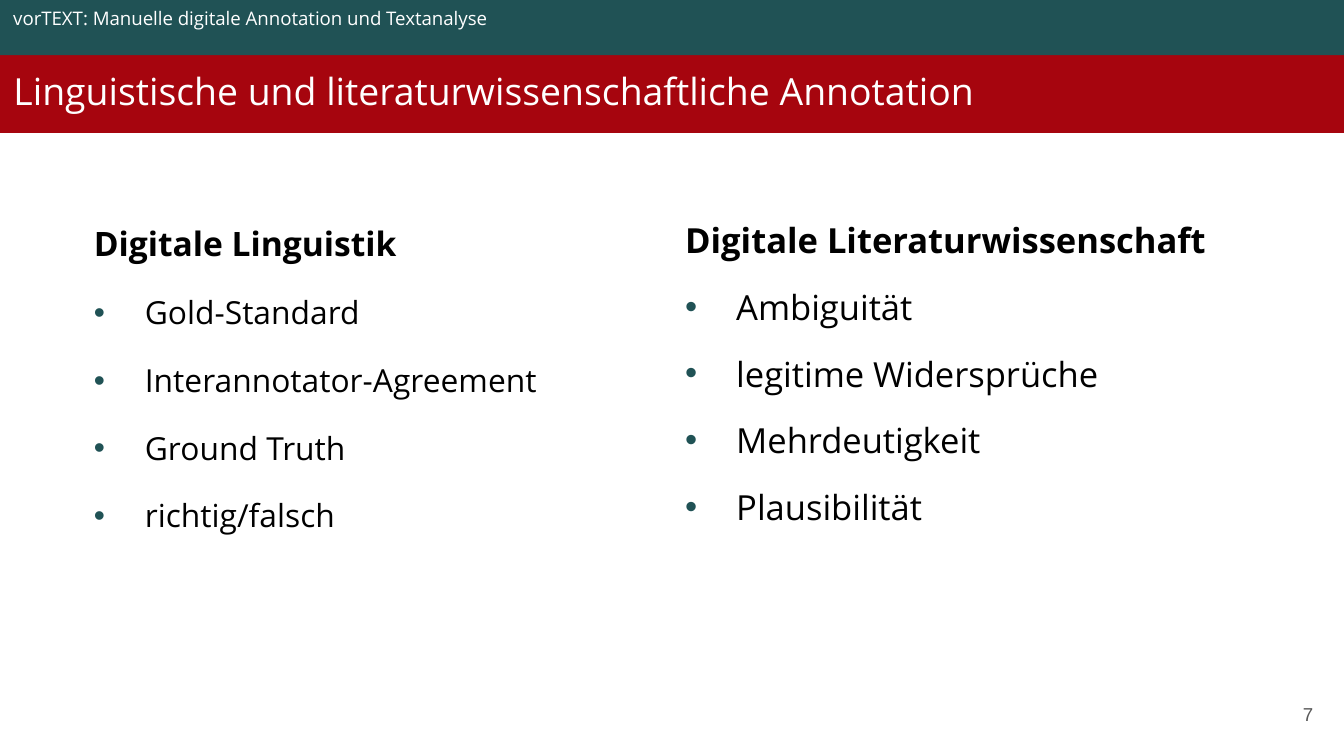
from lxml.etree import SubElement
from pptx import Presentation
from pptx.dml.color import RGBColor
from pptx.enum.shapes import MSO_SHAPE as Shape
from pptx.enum.text import MSO_ANCHOR as Anchor, MSO_AUTO_SIZE as AutoSize, PP_ALIGN as Align
from pptx.oxml.ns import qn
from pptx.util import Inches, Pt

TEAL = RGBColor(0x20, 0x52, 0x55)
RED = RGBColor(0xA6, 0x05, 0x0E)
GREY = RGBColor(0x59, 0x59, 0x59)
WHITE = RGBColor(0xFF, 0xFF, 0xFF)
BLACK = RGBColor(0x00, 0x00, 0x00)
FONT = "Open Sans"

SERIES = "vorTEXT: Manuelle digitale Annotation und Textanalyse"
TITLE = "Linguistische und literaturwissenschaftliche Annotation"
PAGE = "7"
COLUMNS = [
    {"heading": "Digitale Linguistik",
     "items": ["Gold-Standard", "Interannotator-Agreement", "Ground Truth", "richtig/falsch"],
     "left": 0.6, "width": 3.7, "sizes": (18, 17), "line": 0.9},
    {"heading": "Digitale Literaturwissenschaft",
     "items": ["Ambiguität", "legitime Widersprüche", "Mehrdeutigkeit", "Plausibilität"],
     "left": 5, "width": 4.5, "sizes": (18.5, 18.5), "line": 0.8},
]

WIDTH = 10
HEIGHT = WIDTH * 9 / 16
HEADER, TITLE_BAR = 0.41, 0.58
COLUMN_TOP, COLUMN_HEIGHT = 1.64, 2.74
INDENT, ITEM_GAP = 0.38, 18


def box(left, top, width, height):
    return [Inches(value) for value in (left, top, width, height)]


def set_frame(shape, vertical, anchor=Anchor.TOP):
    frame = shape.text_frame
    frame.word_wrap = True
    frame.auto_size = AutoSize.NONE
    frame.vertical_anchor = anchor
    frame.margin_left = frame.margin_right = Inches(0.1)
    frame.margin_top = frame.margin_bottom = Inches(vertical)
    return frame


def add_run(paragraph, text, size, color, bold=False, font=FONT):
    run = paragraph.add_run()
    run.text = text
    run.font.name = font
    run.font.size = Pt(size)
    run.font.bold = bold
    run.font.color.rgb = color


def add_bullet(paragraph):
    properties = paragraph._p.get_or_add_pPr()
    properties.set("marL", str(Inches(INDENT)))
    properties.set("indent", str(-Inches(INDENT)))
    color = SubElement(properties, qn("a:buClr"))
    SubElement(color, qn("a:srgbClr"), val=str(TEAL))
    SubElement(properties, qn("a:buFont"), typeface="Arial")
    SubElement(properties, qn("a:buChar"), char="•")


def add_rectangle(slide, place, color):
    shape = slide.shapes.add_shape(Shape.RECTANGLE, *place)
    shape.shadow.inherit = False
    shape.fill.solid()
    shape.fill.fore_color.rgb = color
    shape.line.fill.background()
    return shape


def add_title(slide):
    title = slide.shapes.title
    title.left, title.top, title.width, title.height = box(0, HEADER, WIDTH, TITLE_BAR)
    title.fill.solid()
    title.fill.fore_color.rgb = RED
    paragraph = set_frame(title, 0.1).paragraphs[0]
    paragraph.alignment = Align.LEFT
    add_run(paragraph, TITLE, 20, WHITE)


def add_page_number(slide):
    shape = add_rectangle(slide, box(9.27, 5.1, 0.6, 0.43), WHITE)
    paragraph = set_frame(shape, 0.1, Anchor.MIDDLE).paragraphs[0]
    paragraph.alignment = Align.RIGHT
    add_run(paragraph, PAGE, 10, GREY, font="Arial")


def add_column(slide, column):
    place = box(column["left"], COLUMN_TOP, column["width"], COLUMN_HEIGHT)
    frame = set_frame(slide.shapes.add_textbox(*place), 0.05)
    heading_size, item_size = column["sizes"]
    heading = frame.paragraphs[0]
    heading.line_spacing = column["line"]
    add_run(heading, column["heading"], heading_size, BLACK, bold=True)
    for item in column["items"]:
        paragraph = frame.add_paragraph()
        paragraph.line_spacing = column["line"]
        paragraph.space_before = Pt(ITEM_GAP)
        add_bullet(paragraph)
        add_run(paragraph, item, item_size, BLACK)


def main():
    presentation = Presentation()
    presentation.slide_width = Inches(WIDTH)
    presentation.slide_height = Inches(HEIGHT)
    slide = presentation.slides.add_slide(presentation.slide_layouts[5])
    add_title(slide)
    add_page_number(slide)
    add_rectangle(slide, box(0, 0, WIDTH, HEADER), TEAL)
    for column in COLUMNS:
        add_column(slide, column)
    series = slide.shapes.add_textbox(*box(0, 0, 6.99, 0.27))
    add_run(set_frame(series, 0.05).paragraphs[0], SERIES, 10, WHITE)
    presentation.save("out.pptx")


if __name__ == "__main__":
    main()
